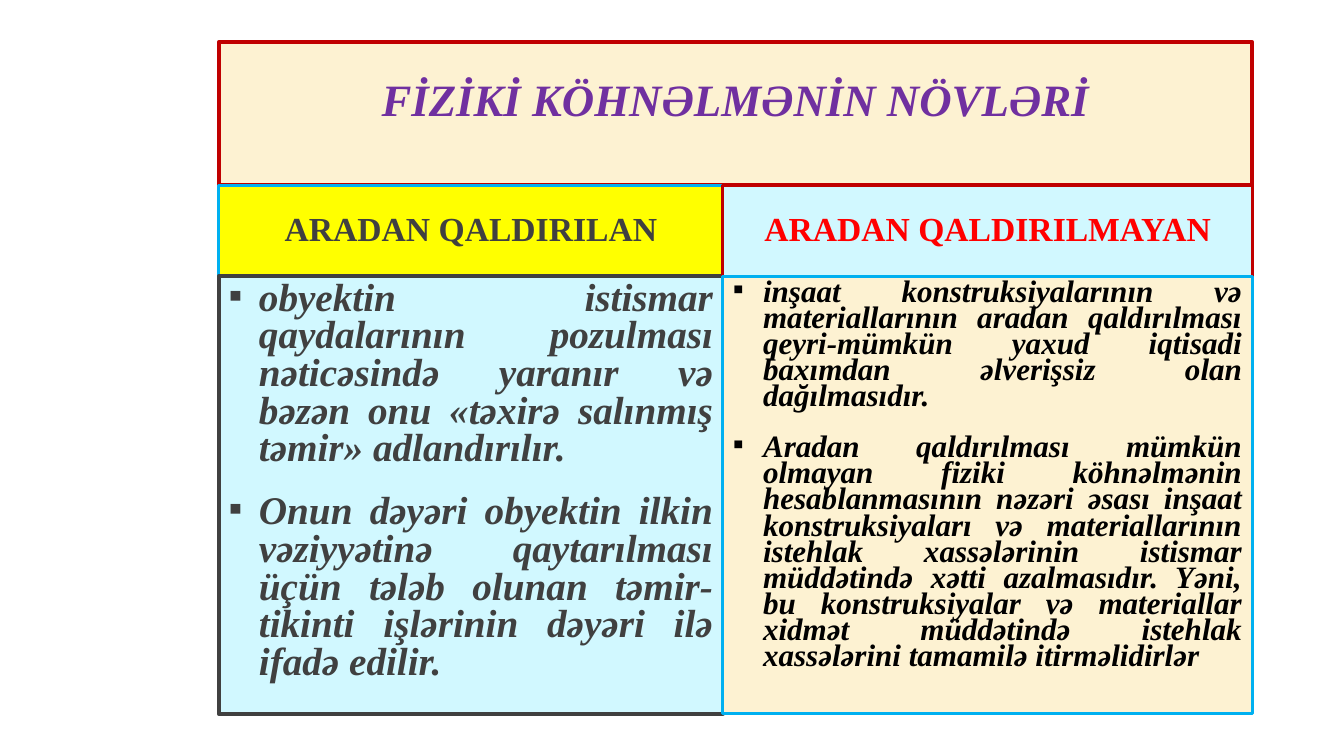
from dataclasses import dataclass

from lxml.etree import SubElement
from pptx import Presentation
from pptx.dml.color import RGBColor
from pptx.enum.shapes import MSO_SHAPE
from pptx.enum.text import MSO_ANCHOR, PP_ALIGN
from pptx.oxml.ns import qn
from pptx.util import Inches, Pt

FONT = "Times New Roman"
CREAM, ICE, YELLOW = "FDF2D2", "D1F8FF", "FFFF00"
DARK_RED, SKY, GREY = "C00000", "00B0F0", "404040"
PURPLE, RED, BLACK = "7030A0", "FF0000", "000000"

# Grid of the comparison
LEFT, MIDDLE, RIGHT = 2.17, 7.17, 12.42
TITLE_TOP, HEADING_TOP, BODY_TOP, BOTTOM = 0.42, 1.84, 2.74, 7.08


@dataclass
class Cell:
    """One framed panel: its text, edges and colours."""
    paragraphs: list[str]
    left: float
    top: float
    right: float
    bottom: float
    fill: str
    border: str
    border_width: float
    color: str
    size: float
    spacing: float
    bulleted: bool = False


def rgb(hex_color: str) -> RGBColor:
    return RGBColor.from_string(hex_color)


def add_bullet(paragraph) -> None:
    properties = paragraph._p.get_or_add_pPr()
    properties.set("marL", str(Inches(0.3)))
    properties.set("indent", str(Inches(-0.3)))
    SubElement(properties, qn("a:buFont"), typeface=FONT)
    SubElement(properties, qn("a:buChar"), char="▪")


def write(frame, paragraphs: list[str], *, size: float, color: str,
          spacing: float, align=PP_ALIGN.CENTER, anchor=MSO_ANCHOR.MIDDLE,
          italic: bool = False, bulleted: bool = False) -> None:
    frame.word_wrap = True
    frame.vertical_anchor = anchor
    for index, text in enumerate(paragraphs):
        paragraph = frame.add_paragraph() if index else frame.paragraphs[0]
        if bulleted:
            add_bullet(paragraph)
        paragraph.alignment = align
        paragraph.line_spacing = spacing
        paragraph.space_before = Pt(18 if index else 0)
        run = paragraph.add_run()
        run.text = text
        run.font.name = FONT
        run.font.size = Pt(size)
        run.font.bold = True
        run.font.italic = italic
        run.font.color.rgb = rgb(color)


def frame_panel(shape, fill: str, border: str, width: float) -> None:
    shape.fill.solid()
    shape.fill.fore_color.rgb = rgb(fill)
    shape.line.color.rgb = rgb(border)
    shape.line.width = Pt(width)


def add_cell(slide, cell: Cell) -> None:
    panel = slide.shapes.add_shape(
        MSO_SHAPE.RECTANGLE, Inches(cell.left), Inches(cell.top),
        Inches(cell.right - cell.left), Inches(cell.bottom - cell.top))
    panel.shadow.inherit = False
    frame_panel(panel, cell.fill, cell.border, cell.border_width)
    write(panel.text_frame, cell.paragraphs, size=cell.size, color=cell.color,
          spacing=cell.spacing, italic=cell.bulleted, bulleted=cell.bulleted,
          align=PP_ALIGN.JUSTIFY if cell.bulleted else PP_ALIGN.CENTER,
          anchor=MSO_ANCHOR.TOP if cell.bulleted else MSO_ANCHOR.MIDDLE)


def add_title(slide) -> None:
    title = slide.shapes.title
    title.left, title.top = Inches(LEFT), Inches(TITLE_TOP)
    title.width = Inches(RIGHT - LEFT)
    title.height = Inches(HEADING_TOP - TITLE_TOP)
    frame_panel(title, CREAM, DARK_RED, 3)
    title.text_frame.margin_bottom = Inches(0.59)
    write(title.text_frame, ["FİZİKİ KÖHNƏLMƏNİN NÖVLƏRİ"], size=32,
          color=PURPLE, spacing=0.85, anchor=MSO_ANCHOR.BOTTOM, italic=True)


REMOVABLE = [
    "obyektin istismar qaydalarının pozulması nəticəsində yaranır və bəzən "
    "onu «təxirə salınmış təmir» adlandırılır.",
    "Onun dəyəri obyektin ilkin vəziyyətinə qaytarılması üçün tələb olunan "
    "təmir-tikinti işlərinin dəyəri ilə ifadə edilir.",
]
IRREMOVABLE = [
    "inşaat konstruksiyalarının və materiallarının aradan qaldırılması "
    "qeyri-mümkün yaxud iqtisadi baxımdan əlverişsiz olan dağılmasıdır.",
    "Aradan qaldırılması mümkün olmayan fiziki köhnəlmənin hesablanmasının "
    "nəzəri əsası inşaat konstruksiyaları və materiallarının istehlak "
    "xassələrinin istismar müddətində xətti azalmasıdır. Yəni, bu "
    "konstruksiyalar və materiallar xidmət müddətində istehlak xassələrini "
    "tamamilə itirməlidirlər",
]

CELLS = [
    Cell(["ARADAN QALDIRILAN"], LEFT, HEADING_TOP, MIDDLE, BODY_TOP,
         YELLOW, SKY, 2.25, GREY, 24, 0.9),
    Cell(REMOVABLE, LEFT, BODY_TOP, MIDDLE, BOTTOM,
         ICE, GREY, 3, GREY, 28, 0.8, bulleted=True),
    Cell(["ARADAN QALDIRILMAYAN"], MIDDLE, HEADING_TOP, RIGHT, BODY_TOP,
         ICE, DARK_RED, 2.25, RED, 24, 0.9),
    Cell(IRREMOVABLE, MIDDLE, BODY_TOP, RIGHT, BOTTOM,
         CREAM, SKY, 2.25, BLACK, 22.2, 0.7, bulleted=True),
]


def main() -> None:
    deck = Presentation()
    deck.slide_width, deck.slide_height = Inches(13.33), Inches(7.5)
    slide = deck.slides.add_slide(deck.slide_layouts[5])
    add_title(slide)
    for cell in CELLS:
        add_cell(slide, cell)
    deck.save("out.pptx")


if __name__ == "__main__":
    main()
